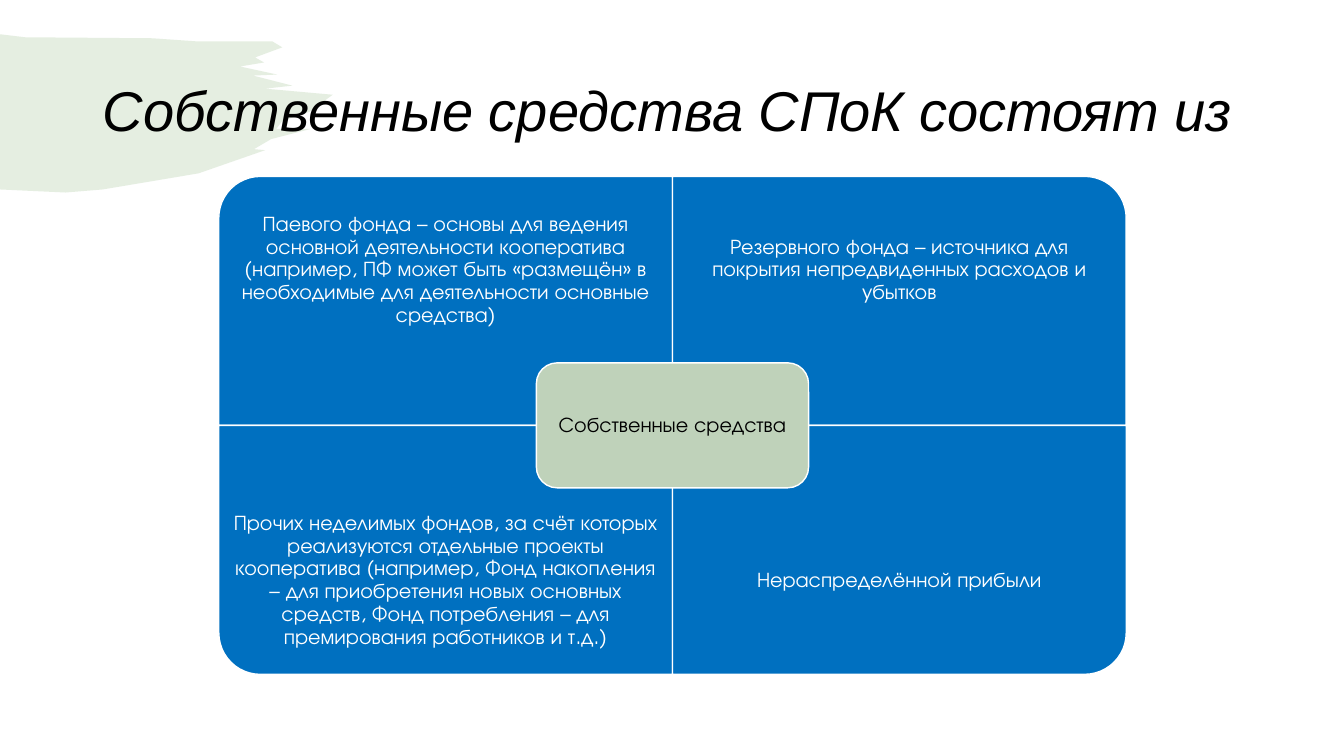
"""Builds a slide on what a cooperative's own funds consist of, as a four-part matrix."""
from dataclasses import dataclass

from lxml.etree import SubElement
from pptx import Presentation
from pptx.dml.color import RGBColor
from pptx.enum.shapes import MSO_SHAPE
from pptx.enum.text import MSO_ANCHOR, MSO_AUTO_SIZE, PP_ALIGN
from pptx.oxml.ns import qn
from pptx.util import Emu, Pt

PX = 9144
SLIDE_SIZE = (1333, 750)

TITLE = "Собственные средства СПоК состоят из"
CENTER = "Собственные средства"
QUADRANTS = [
    ("Паевого фонда – основы для ведения основной деятельности кооператива "
     "(например, ПФ может быть «размещён» в необходимые для деятельности основные средства)", 270),
    ("Резервного фонда – источника для покрытия непредвиденных расходов и убытков", 0),
    ("Прочих неделимых фондов, за счёт которых реализуются отдельные проекты кооператива "
     "(например, Фонд накопления – для приобретения новых основных средств, "
     "Фонд потребления – для премирования работников и т.д.)", 180),
    ("Нераспределённой прибыли", 90),
]

TITLE_BOX = (92, 40, 1150, 145)
MATRIX_LEFT, MATRIX_TOP = 217, 175
CELL_WIDTH, CELL_HEIGHT = 450, 247
TEXT_HEIGHT = 186
CENTER_WIDTH, CENTER_HEIGHT = 270, 124
TEXT_INSET = 12

BRUSH_OUTLINE = [
    (0, 34), (25, 37), (151, 38), (194, 41), (270, 41), (280, 47), (253, 57), (262, 62),
    (238, 66), (275, 74), (251, 75), (290, 85), (263, 88), (330, 94), (307, 111),
    (280, 120), (274, 128), (308, 128), (269, 138), (252, 148), (263, 149),
    (197, 172), (102, 188), (65, 191), (0, 188),
]


@dataclass(frozen=True)
class Theme:
    title_font: str = "Arial"
    body_font: str = "TeX Gyre Adventor"
    title_size: int = 40
    body_size: int = 15
    panel: str = "0070C0"
    center: str = "BFD2BA"
    brush: str = "7DAC6C"
    brush_opacity: int = 20
    light: str = "FFFFFF"
    dark: str = "000000"


THEME = Theme()


def emu(*lengths):
    return [Emu(round(length * PX)) for length in lengths]


def add_brush(slide):
    start, *points = BRUSH_OUTLINE
    builder = slide.shapes.build_freeform(*start, scale=PX)
    builder.add_line_segments(points, close=True)
    brush = builder.convert_to_shape()
    brush.shadow.inherit = False
    brush.line.fill.background()
    brush.fill.solid()
    brush.fill.fore_color.rgb = RGBColor.from_string(THEME.brush)
    color = brush._element.spPr.find(".//" + qn("a:srgbClr"))
    SubElement(color, qn("a:alpha")).set("val", str(THEME.brush_opacity * 1000))
    slide.shapes.title._element.addprevious(brush._element)


def write(shape, text, font_name, size, color, align, inset):
    frame = shape.text_frame
    frame.auto_size = MSO_AUTO_SIZE.NONE
    frame.word_wrap = True
    frame.vertical_anchor = MSO_ANCHOR.MIDDLE
    frame.margin_left, frame.margin_top, frame.margin_right, frame.margin_bottom = emu(*[inset] * 4)
    paragraph = frame.paragraphs[0]
    paragraph.text = text
    paragraph.alignment = align
    paragraph.line_spacing = 0.9
    paragraph.font.name = font_name
    paragraph.font.size = Pt(size)
    paragraph.font.color.rgb = RGBColor.from_string(color)
    return paragraph


def write_body(shape, text, color):
    write(shape, text, THEME.body_font, THEME.body_size, color, PP_ALIGN.CENTER, TEXT_INSET)


def add_panel(slide, kind, center_x, center_y, width, height, fill):
    panel = slide.shapes.add_shape(
        kind, *emu(center_x - width / 2, center_y - height / 2, width, height))
    panel.shadow.inherit = False
    panel.fill.solid()
    panel.fill.fore_color.rgb = RGBColor.from_string(fill)
    panel.line.color.rgb = RGBColor.from_string(THEME.light)
    panel.line.width = Pt(1)
    return panel


def add_quadrant(slide, index, text, rotation):
    row, column = divmod(index, 2)
    left = MATRIX_LEFT + column * CELL_WIDTH
    top = MATRIX_TOP + row * CELL_HEIGHT
    size = (CELL_HEIGHT, CELL_WIDTH) if rotation % 180 else (CELL_WIDTH, CELL_HEIGHT)
    panel = add_panel(slide, MSO_SHAPE.ROUND_1_RECTANGLE,
                      left + CELL_WIDTH / 2, top + CELL_HEIGHT / 2, *size, THEME.panel)
    panel.rotation = rotation
    text_top = top + row * (CELL_HEIGHT - TEXT_HEIGHT)
    box = slide.shapes.add_textbox(*emu(left, text_top, CELL_WIDTH, TEXT_HEIGHT))
    write_body(box, text, THEME.light)


def main():
    presentation = Presentation()
    presentation.slide_width, presentation.slide_height = emu(*SLIDE_SIZE)
    slide = presentation.slides.add_slide(presentation.slide_layouts[5])

    title = slide.shapes.title
    title.left, title.top, title.width, title.height = emu(*TITLE_BOX)
    heading = write(title, TITLE, THEME.title_font, THEME.title_size, THEME.dark, PP_ALIGN.LEFT, 10)
    heading.font.italic = True
    add_brush(slide)

    for index, (text, rotation) in enumerate(QUADRANTS):
        add_quadrant(slide, index, text, rotation)
    center = add_panel(slide, MSO_SHAPE.ROUNDED_RECTANGLE,
                       MATRIX_LEFT + CELL_WIDTH, MATRIX_TOP + CELL_HEIGHT,
                       CENTER_WIDTH, CENTER_HEIGHT, THEME.center)
    write_body(center, CENTER, THEME.dark)
    presentation.save("out.pptx")


if __name__ == "__main__":
    main()
